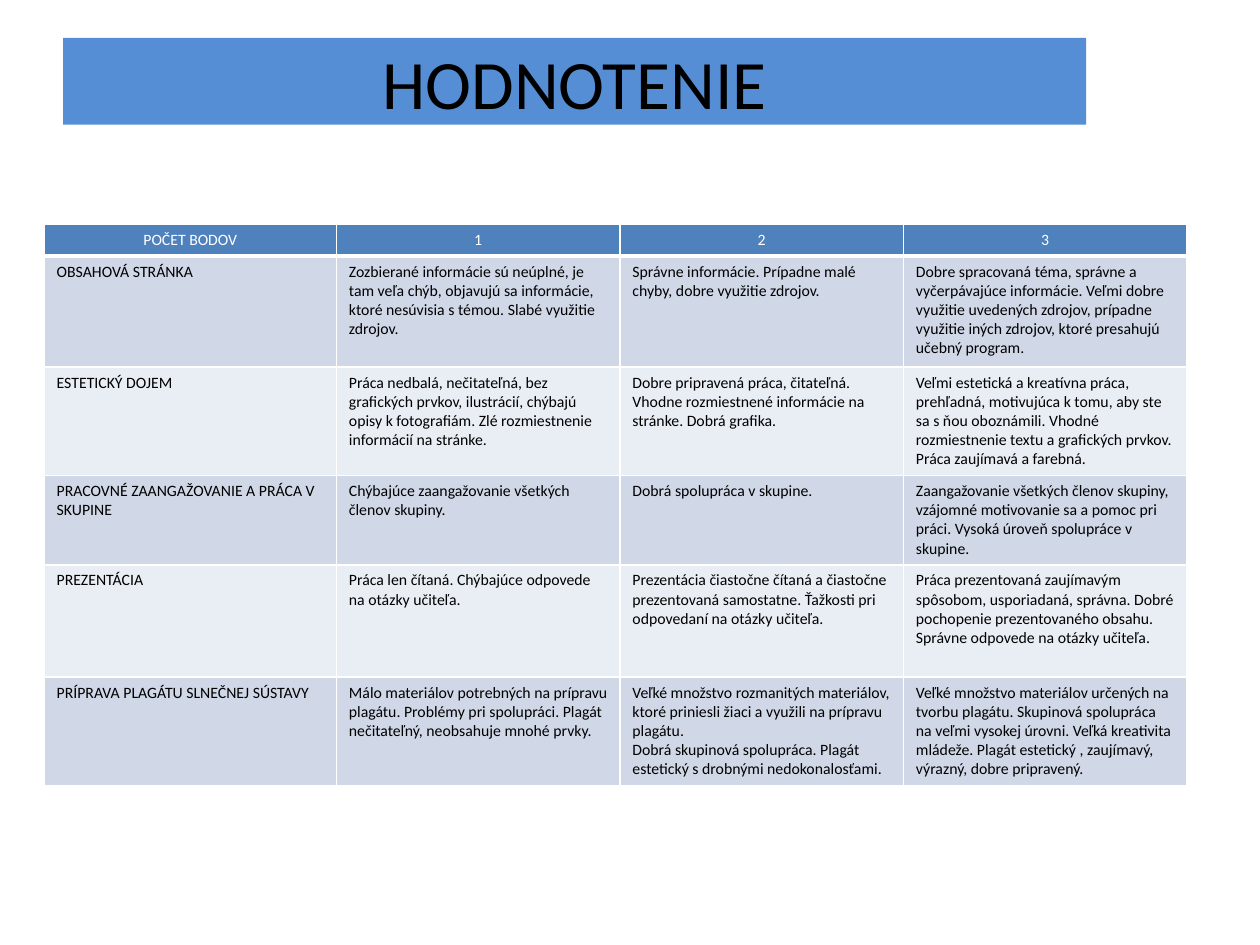
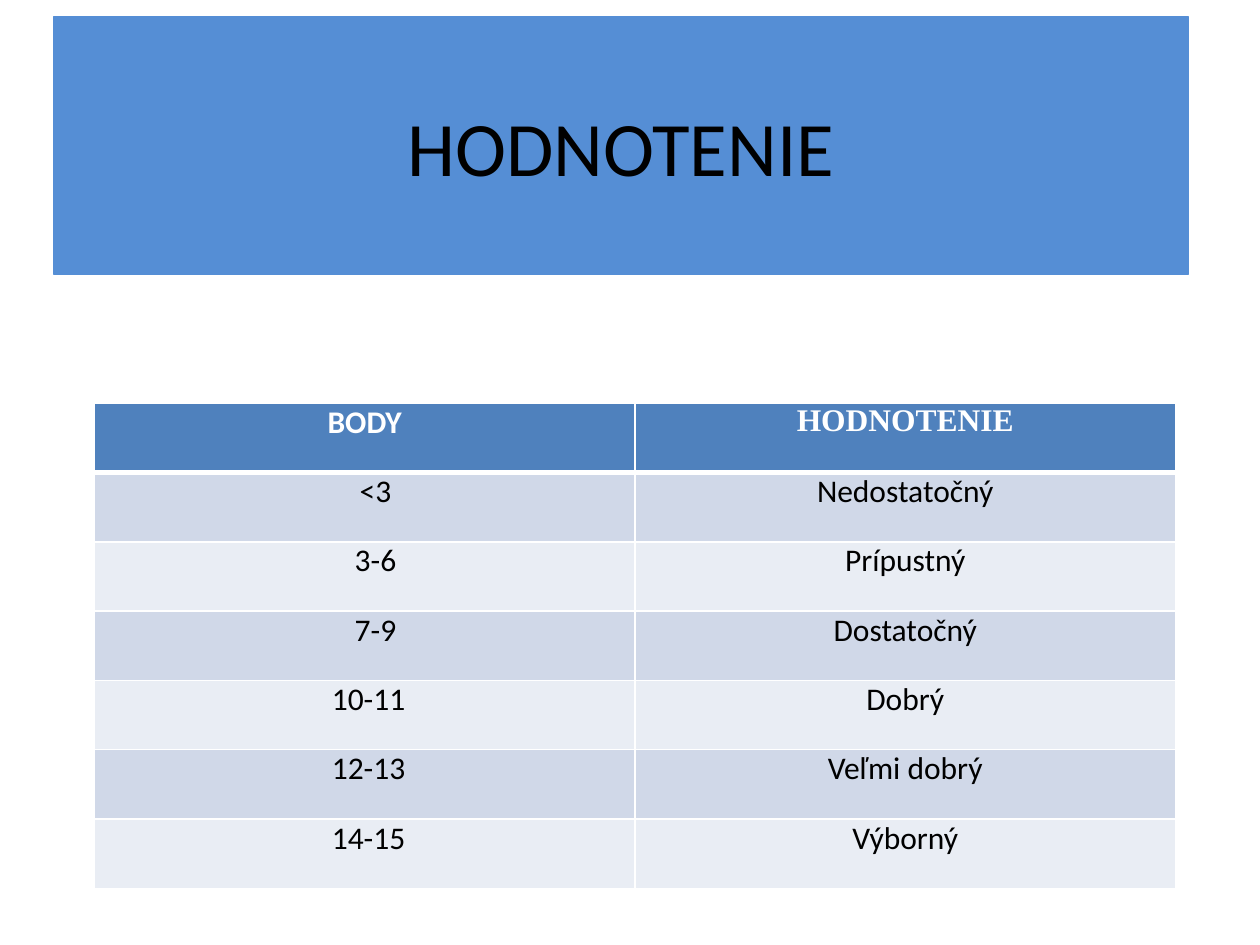
"""Two slides on grading: a rubric table and a points scale."""
from lxml import etree
from pptx import Presentation, util as u
from pptx.dml.color import RGBColor
from pptx.enum import shapes, text
from pptx.oxml import ns

COLOURS = {
    "banner": "558ED5",
    "header": "4F81BD",
    "odd": "D0D8E8",
    "even": "E9EDF4",
    "border": "FFFFFF",
    "light": "FFFFFF",
    "dark": "000000",
}
FONT = "Calibri"
TITLE = "HODNOTENIE"

RUBRIC = [
    ["POČET BODOV", "1", "2", "3"],
    ["OBSAHOVÁ STRÁNKA",
     "Zozbierané informácie sú neúplné, je tam veľa chýb, objavujú sa informácie, "
     "ktoré nesúvisia s témou. Slabé využitie zdrojov.",
     "Správne informácie. Prípadne malé chyby, dobre využitie zdrojov.",
     "Dobre spracovaná téma, správne a vyčerpávajúce informácie. Veľmi dobre využitie "
     "uvedených zdrojov, prípadne využitie iných zdrojov, ktoré presahujú učebný program."],
    ["ESTETICKÝ DOJEM",
     "Práca nedbalá, nečitateľná, bez grafických prvkov, ilustrácií, chýbajú opisy "
     "k fotografiám. Zlé rozmiestnenie informácií na stránke.",
     "Dobre pripravená práca, čitateľná. Vhodne rozmiestnené informácie na stránke. "
     "Dobrá grafika.",
     "Veľmi estetická a kreatívna práca, prehľadná, motivujúca k tomu, aby ste sa s ňou "
     "oboznámili. Vhodné rozmiestnenie textu a grafických prvkov. "
     "Práca zaujímavá a farebná."],
    ["PRACOVNÉ ZAANGAŽOVANIE A PRÁCA V SKUPINE",
     "Chýbajúce zaangažovanie všetkých členov skupiny.",
     "Dobrá spolupráca v skupine.",
     "Zaangažovanie všetkých členov skupiny, vzájomné motivovanie sa a pomoc pri práci. "
     "Vysoká úroveň spolupráce v skupine."],
    ["PREZENTÁCIA",
     "Práca len čítaná. Chýbajúce odpovede na otázky učiteľa.",
     "Prezentácia čiastočne čítaná a čiastočne prezentovaná samostatne. "
     "Ťažkosti pri odpovedaní na otázky učiteľa.",
     "Práca prezentovaná zaujímavým spôsobom, usporiadaná, správna. Dobré pochopenie "
     "prezentovaného obsahu. Správne odpovede na otázky učiteľa."],
    ["PRÍPRAVA PLAGÁTU SLNEČNEJ SÚSTAVY",
     "Málo materiálov potrebných na prípravu plagátu. Problémy pri spolupráci. "
     "Plagát nečitateľný, neobsahuje mnohé prvky.",
     "Veľké množstvo rozmanitých materiálov, ktoré priniesli žiaci a využili "
     "na prípravu plagátu.\n"
     "Dobrá skupinová spolupráca. Plagát estetický s drobnými nedokonalosťami.",
     "Veľké množstvo materiálov určených na tvorbu plagátu. Skupinová spolupráca na veľmi "
     "vysokej úrovni. Veľká kreativita mládeže. Plagát estetický , zaujímavý, výrazný, "
     "dobre pripravený."],
]
SCALE = [
    ["BODY", TITLE],
    ["<3", "Nedostatočný"],
    ["3-6", "Prípustný"],
    ["7-9", "Dostatočný"],
    ["10-11", "Dobrý"],
    ["12-13", "Veľmi dobrý"],
    ["14-15", "Výborný"],
]


def colour(name):
    """Return the named palette colour."""
    return RGBColor.from_string(COLOURS[name])


def format_text(text_frame, size, colour_name, centred, bold=False):
    """Apply one look to every paragraph of a text frame."""
    for paragraph in text_frame.paragraphs:
        paragraph.alignment = text.PP_ALIGN.CENTER if centred else text.PP_ALIGN.LEFT
        for run in paragraph.runs:
            run.font.name = FONT
            run.font.size = u.Pt(size)
            run.font.bold = bold
            run.font.color.rgb = colour(colour_name)


def add_banner(slide, left, top, width, height, size, outline=0):
    """Add the filled title band."""
    banner = slide.shapes.add_shape(
        shapes.MSO_SHAPE.RECTANGLE, *map(u.Inches, (left, top, width, height)))
    banner.shadow.inherit = False
    banner.fill.solid()
    banner.fill.fore_color.rgb = colour("banner")
    if outline:
        banner.line.color.rgb = colour("banner")
        banner.line.width = u.Pt(outline)
    else:
        banner.line.fill.background()
    banner.text_frame.text = TITLE
    banner.text_frame.vertical_anchor = text.MSO_ANCHOR.MIDDLE
    format_text(banner.text_frame, size, "dark", True)


def set_borders(cell, row):
    """Draw thin cell borders, with a thick one beneath the header."""
    thick = {0: "lnB", 1: "lnT"}.get(row)
    properties = cell._tc.get_or_add_tcPr()
    for side in ("lnL", "lnR", "lnT", "lnB"):
        width = u.Pt(3 if side == thick else 1)
        line = etree.SubElement(properties, ns.qn(f"a:{side}"), w=str(width))
        fill = etree.SubElement(line, ns.qn("a:solidFill"))
        etree.SubElement(fill, ns.qn("a:srgbClr"), val=COLOURS["border"])


def add_grid(slide, left, top, widths, heights, rows, size, centred=False, bold_header=False):
    """Add a table with a header row and alternating row fills."""
    table = slide.shapes.add_table(
        len(rows), len(widths),
        *map(u.Inches, (left, top, sum(widths), sum(heights)))).table
    table.horz_banding = False
    for column, width in zip(table.columns, widths):
        column.width = u.Inches(width)
    for index, (row, height, values) in enumerate(zip(table.rows, heights, rows)):
        row.height = u.Inches(height)
        header = index == 0
        fill_name = "header" if header else "odd" if index % 2 else "even"
        for cell, value in zip(row.cells, values):
            set_borders(cell, index)
            cell.fill.solid()
            cell.fill.fore_color.rgb = colour(fill_name)
            cell.text_frame.text = value
            format_text(cell.text_frame, size, "light" if header else "dark",
                        header or centred, header and bold_header)
    return table


def adjust_scale(table):
    """Tighten the cell margins and nudge the points to the right."""
    for index, row in enumerate(table.rows):
        for cell in row.cells:
            cell.margin_left = cell.margin_right = u.Inches(0.07)
            cell.margin_top = cell.margin_bottom = 0
        if index:
            row.cells[0].margin_left = u.Inches(0.24 if index <= 3 else 0.13)
    table.cell(0, 1).text_frame.paragraphs[0].runs[0].font.name = "Times New Roman"


def main():
    """Build and save both slides."""
    presentation = Presentation()
    presentation.slide_width, presentation.slide_height = u.Inches(10), u.Inches(7.5)
    blank = presentation.slide_layouts[6]

    rubric_slide = presentation.slides.add_slide(blank)
    add_banner(rubric_slide, 0.5, 0.3, 8.12, 0.69, 39.6)
    add_grid(rubric_slide, 0.35, 1.78, [2.32] + [2.25] * 3,
             [0.25, 0.88, 0.86, 0.71, 0.89, 0.86], RUBRIC, 9)

    scale_slide = presentation.slides.add_slide(blank)
    add_banner(scale_slide, 0.43, 0.13, 9, 2.05, 44, outline=0.75)
    scale = add_grid(scale_slide, 0.75, 3.2, [4.29] * 2, [0.55] * len(SCALE), SCALE, 18,
                     centred=True, bold_header=True)
    adjust_scale(scale)

    presentation.save("out.pptx")


if __name__ == "__main__":
    main()
